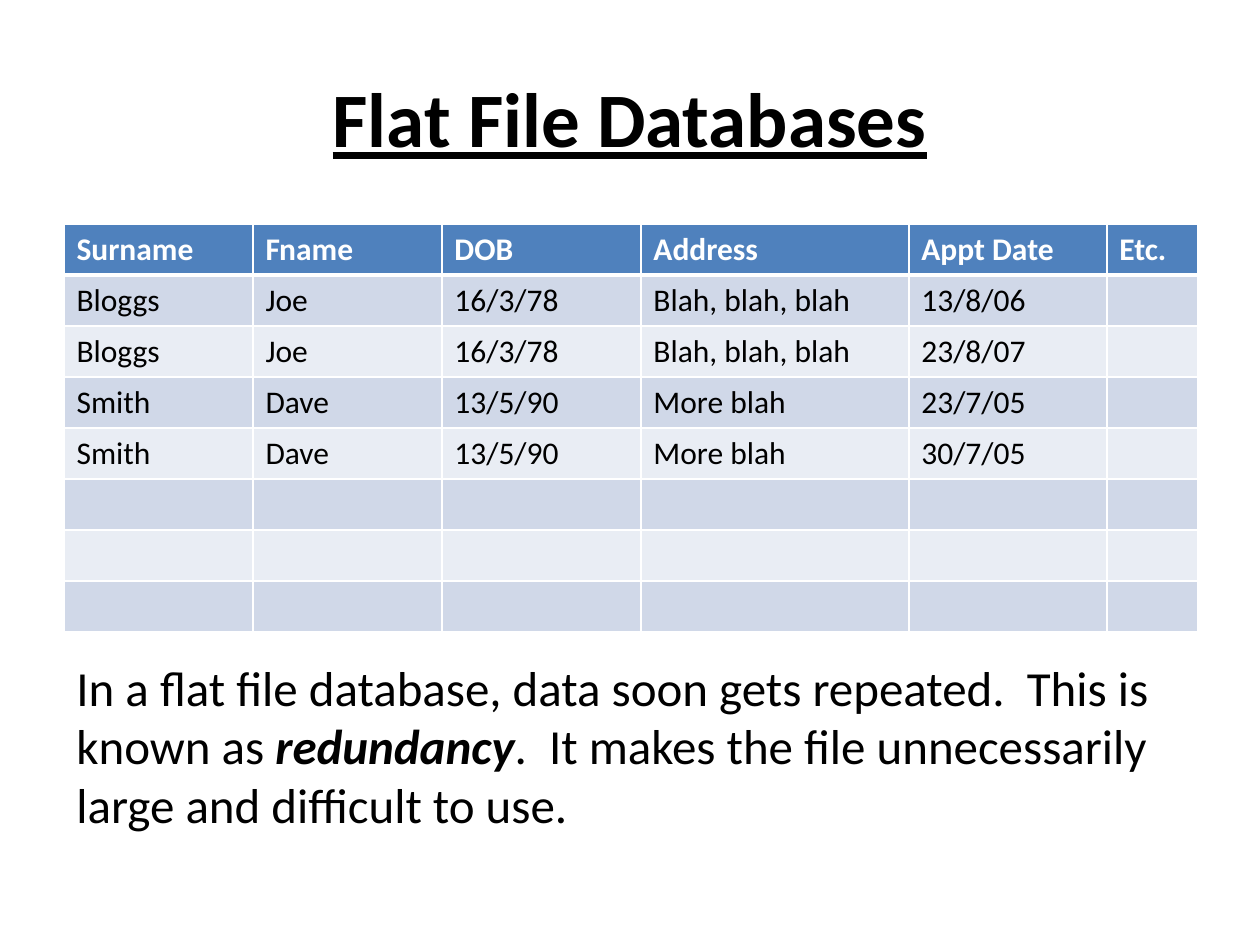
from dataclasses import dataclass

import pptx
import pptx.dml.color
import pptx.enum.text
import pptx.oxml
import pptx.oxml.ns
import pptx.util

PX = 914400 // 126  # EMU per px
FONT = "Calibri"
BLACK, WHITE = "000000", "FFFFFF"
HEADER_FILL = "4F81BD"
BAND_FILLS = ("D0D8E8", "E9EDF4")

COLUMN_WIDTHS = (189, 189, 199, 268, 198, 91)
ROW_HEIGHT = 51
EMPTY_ROWS = 3
HEADINGS = ("Surname", "Fname", "DOB", "Address", "Appt Date", "Etc.")


@dataclass
class Appointment:
    surname: str
    fname: str
    dob: str
    address: str
    date: str

    def cells(self) -> tuple[str, ...]:
        return (self.surname, self.fname, self.dob, self.address, self.date, "")


@dataclass
class Span:
    text: str
    emphasis: bool = False


APPOINTMENTS = (
    Appointment("Bloggs", "Joe", "16/3/78", "Blah, blah, blah", "13/8/06"),
    Appointment("Bloggs", "Joe", "16/3/78", "Blah, blah, blah", "23/8/07"),
    Appointment("Smith", "Dave", "13/5/90", "More blah", "23/7/05"),
    Appointment("Smith", "Dave", "13/5/90", "More blah", "30/7/05"),
)
EXPLANATION = (
    Span("In a flat file database, data soon gets repeated.  This is known as "),
    Span("redundancy", emphasis=True),
    Span(".  It makes the file unnecessarily large and difficult to use."),
)


def px(length: int) -> pptx.util.Emu:
    return pptx.util.Emu(length * PX)


def rgb(color: str) -> pptx.dml.color.RGBColor:
    return pptx.dml.color.RGBColor.from_string(color)


def set_font(p, size: int, color: str = BLACK, bold: bool = False) -> None:
    p.font.name = FONT
    p.font.size = pptx.util.Pt(size)
    p.font.bold = bold
    p.font.color.rgb = rgb(color)


def add_text(s, left: int, top: int, width: int, height: int):
    tf = s.shapes.add_textbox(px(left), px(top), px(width), px(height)).text_frame
    tf.word_wrap = True
    return tf


def add_borders(cell, bottom: int) -> None:
    tc_pr = cell._tc.get_or_add_tcPr()
    for side, points in (("L", 1), ("R", 1), ("T", 1), ("B", bottom)):
        tc_pr.append(pptx.oxml.parse_xml(
            f'<a:ln{side} {pptx.oxml.ns.nsdecls("a")} w="{points * 12700}">'
            f'<a:solidFill><a:srgbClr val="{WHITE}"/></a:solidFill></a:ln{side}>'))


def add_records(s, left: int, top: int) -> None:
    blank = ("",) * len(HEADINGS)
    rows = [HEADINGS, *(a.cells() for a in APPOINTMENTS), *[blank] * EMPTY_ROWS]
    table = s.shapes.add_table(
        len(rows), len(HEADINGS), px(left), px(top),
        px(sum(COLUMN_WIDTHS)), px(ROW_HEIGHT * len(rows))).table
    for column, width in zip(table.columns, COLUMN_WIDTHS):
        column.width = px(width)
    for i, texts in enumerate(rows):
        header = i == 0
        table.rows[i].height = px(ROW_HEIGHT)
        for j, text in enumerate(texts):
            cell = table.cell(i, j)
            add_borders(cell, bottom=3 if header else 1)
            cell.fill.solid()
            cell.fill.fore_color.rgb = rgb(HEADER_FILL if header else BAND_FILLS[(i - 1) % 2])
            cell.text = text
            set_font(cell.text_frame.paragraphs[0], 18, WHITE if header else BLACK, header)


def main() -> None:
    prs = pptx.Presentation()
    prs.slide_width, prs.slide_height = pptx.util.Inches(10), pptx.util.Inches(7.5)
    s = prs.slides.add_slide(prs.slide_layouts[6])

    # Title
    tf = add_text(s, 63, 38, 1134, 158)
    tf.vertical_anchor = pptx.enum.text.MSO_ANCHOR.MIDDLE
    p = tf.paragraphs[0]
    p.text = "Flat File Databases"
    p.alignment = pptx.enum.text.PP_ALIGN.CENTER
    set_font(p, 44, bold=True)
    p.font.underline = True

    # Appointment records
    add_records(s, 64, 224)

    # Explanation
    p = add_text(s, 64, 651, 1121, 190).paragraphs[0]
    set_font(p, 28)
    for span in EXPLANATION:
        r = p.add_run()
        r.text = span.text
        if span.emphasis:
            r.font.bold = r.font.italic = True

    prs.save("out.pptx")


if __name__ == "__main__":
    main()
